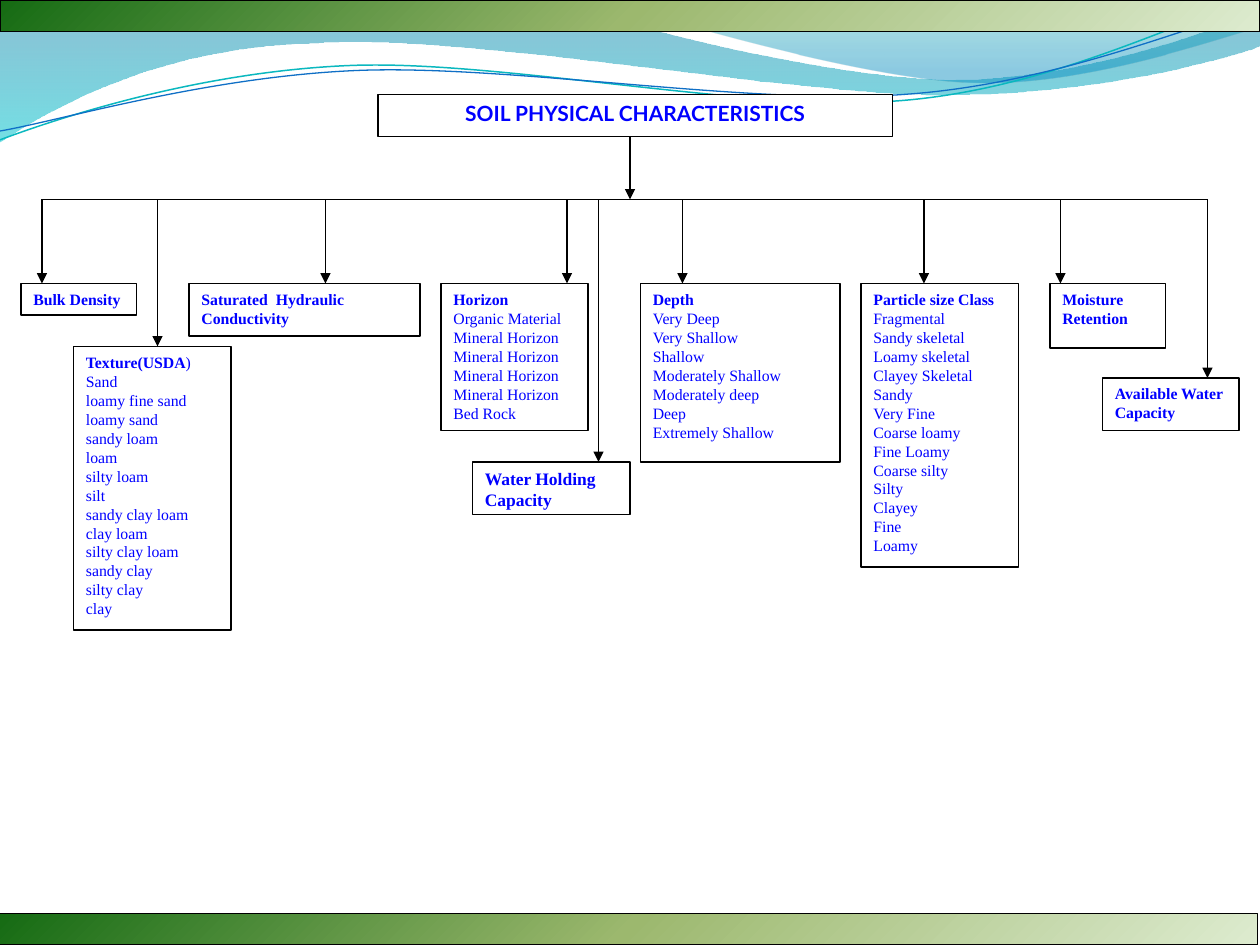
import math

import pptx
import pptx.util
import pptx.dml.color
import pptx.enum.shapes
import pptx.enum.text
import pptx.oxml
import pptx.oxml.ns
from lxml import etree

Inches = pptx.util.Inches
Pt = pptx.util.Pt
RGBColor = pptx.dml.color.RGBColor
qn = pptx.oxml.ns.qn
RECT = pptx.enum.shapes.MSO_SHAPE.RECTANGLE

BLACK = RGBColor(0x00, 0x00, 0x00)
WHITE = RGBColor(0xFF, 0xFF, 0xFF)
BLUE = RGBColor(0x00, 0x00, 0xFF)
TEAL = RGBColor(0x0A, 0xB8, 0xBF)
NAVY = RGBColor(0x0F, 0x6F, 0xC6)
DEEP = RGBColor(0x00, 0x74, 0xA1)
AQUA = RGBColor(0x00, 0xC6, 0xCF)
SEA = RGBColor(0x00, 0xA1, 0xA9)
SKY = RGBColor(0x00, 0x8B, 0xBF)
PALE = RGBColor(0xDD, 0xEB, 0xCF)
OLIVE = RGBColor(0x9C, 0xB8, 0x6E)
GREEN = RGBColor(0x15, 0x6B, 0x13)

DOWN = '<a:lin ang="5400000" scaled="0"/>'
CORNER = '<a:path path="circle"><a:fillToRect l="100000" t="100000"/></a:path>'
GRID = Inches(1) / 12  # the chart sits on twelfths of an inch
BUS = 19
TILT = -2.7


def shade(shape, stops, kind):
    """Give a gradient fill; a stop is percent, colour and opacity percent."""
    marks = "".join(
        f'<a:gs pos="{pos * 1000}"><a:srgbClr val="{color}">'
        f'<a:alpha val="{alpha * 1000}"/></a:srgbClr></a:gs>'
        for pos, color, alpha in stops)
    grad = pptx.oxml.parse_xml(
        f'<a:gradFill {pptx.oxml.ns.nsdecls("a")} rotWithShape="1">'
        f'<a:gsLst>{marks}</a:gsLst>{kind}</a:gradFill>')
    shape.fill.background()
    props = shape.element.spPr
    props.replace(props.find(qn("a:noFill")), grad)


def write(para, text, size, bold, font="Times New Roman"):
    run = para.add_run()
    run.text = text
    run.font.size = Pt(size)
    run.font.bold = bold
    run.font.name = font
    run.font.color.rgb = BLUE


deck = pptx.Presentation()
deck.slide_width, deck.slide_height = Inches(10), Inches(7.5)
slide = deck.slides.add_slide(deck.slide_layouts[5])
shapes = slide.shapes

# Waves: a start point, then steps of 2 numbers (line) or 6 (cubic curve);
# a stroked wave has the centre it is tilted about
waves = [
    ((0, 0), [(4.4, -0.01), (4.76, 0.17, 6.64, 0.63, 7.58, 0.63),
              (8.53, 0.63, 9.58, 0.26, 10, 0.09), (10.01, 0.36),
              (9.83, 0.44, 8.7, 0.76, 7.46, 0.75),
              (6.22, 0.75, 3.82, 0.28, 2.57, 0.34),
              (1.29, 0.36, 0.46, 0.83, -0.01, 1.13), (0, 0)],
     [(0, DEEP, 45), (100, AQUA, 55)], None, 0, None),
    ((4.79, -0.01), [(5.09, 0.11, 6.82, 0.62, 7.69, 0.65),
                     (8.56, 0.69, 9.61, 0.32, 10, 0.21), (10, 0),
                     (4.79, -0.01)],
     [(0, SEA, 30), (80, SKY, 45)], None, 0, None),
    ((0, 1.11), [(0.48, 0.93, 1.58, 0.57, 2.77, 0.52),
                 (3.95, 0.47, 5.93, 0.89, 7.13, 0.8),
                 (8.33, 0.71, 9.38, 0.15, 9.98, -0.02)],
     None, TEAL, 0.85, (4.99, 0.58)),
    ((0, 1.04), [(0.47, 0.96, 1.64, 0.61, 2.83, 0.56),
                 (4.03, 0.51, 5.97, 0.84, 7.17, 0.75),
                 (8.36, 0.67, 9.41, 0.21, 10, 0.06)],
     None, NAVY, 0.75, (5, 0.59)),
]
for start, steps, stops, color, width, mid in waves:
    points = [start]
    for step in steps:
        points += zip(step[::2], step[1::2])
    if mid:
        cos, sin = math.cos(math.radians(-TILT)), math.sin(math.radians(-TILT))
        points = [(mid[0] + (x - mid[0]) * cos - (y - mid[1]) * sin,
                   mid[1] + (x - mid[0]) * sin + (y - mid[1]) * cos)
                  for x, y in points]
    spots = [(Inches(x), Inches(y)) for x, y in points]
    pen = shapes.build_freeform(*spots[0])
    pen.add_line_segments(spots[1:], close=bool(stops))
    wave = pen.convert_to_shape()
    wave.shadow.inherit = False

    # Join each group of three points into one curve
    legs = iter(list(wave.element.iter(qn("a:lnTo"))))
    for step in steps:
        leg = next(legs)
        if len(step) == 6:
            leg.tag = qn("a:cubicBezTo")
            for extra in (next(legs), next(legs)):
                leg.append(extra[0])
                extra.getparent().remove(extra)

    if stops:
        shade(wave, stops, DOWN)
        wave.line.fill.background()
    else:
        wave.rotation = TILT
        wave.fill.background()
        wave.line.color.rgb = color
        wave.line.width = Pt(width)

# Boxes in grid units: left, top, width, height, arrow x; size, heading, items
boxes = [
    (82, 27, 15, 27, 88, 9, "Particle size Class",
     ["Fragmental", "Sandy skeletal", "Loamy skeletal", "Clayey Skeletal",
      "Sandy", "Very Fine", "Coarse loamy", "Fine Loamy", "Coarse silty",
      "Silty", "Clayey", "Fine", "Loamy"]),
    (18, 27, 22, 5, 31, 9, "Saturated  Hydraulic Conductivity", []),
    (2, 27, 11, 3, 4, 9, "Bulk Density", []),
    (42, 27, 14, 14, 54, 9, "Horizon",
     ["Organic Material"] + ["Mineral Horizon"] * 4 + ["Bed Rock"]),
    (7, 33, 15, 27, 15, 9, "Texture(USDA)",
     ["Sand", "loamy fine sand", "loamy sand", "sandy loam", "loam",
      "silty loam", "silt", "sandy clay loam", "clay loam",
      "silty clay loam", "sandy clay", "silty clay", "clay"]),
    (61, 27, 19, 17, 65, 9, "Depth",
     ["Very Deep", "Very Shallow", "Shallow", "Moderately Shallow",
      "Moderately deep", "Deep", "Extremely Shallow"]),
    (100, 27, 11, 6.15, 101, 9, "Moisture Retention", []),
    (105, 36, 13, 5, 115, 9, "Available Water Capacity", []),
    (45, 44, 15, 5, 57, 10, "Water Holding Capacity", []),
]
framed = []
for *place, drop, size, head, items in boxes:
    box = shapes.add_shape(RECT, *[round(n * GRID) for n in place])
    box.fill.solid()
    box.fill.fore_color.rgb = WHITE
    frame = box.text_frame
    frame.word_wrap = True
    frame.vertical_anchor = pptx.enum.text.MSO_ANCHOR.TOP
    para = frame.paragraphs[0]
    name, mark, rest = head.partition(")")
    write(para, name, size, True)
    if mark:
        write(para, mark, size, False)
    for item in items:
        write(frame.add_paragraph(), item, size, False)
    for para in frame.paragraphs:
        para.alignment = pptx.enum.text.PP_ALIGN.LEFT
    framed.append(box)

# Bus, stem and one arrow down to each box
links = [(4, BUS, 115, BUS, False), (60, 13, 60, BUS, True)]
links += [(box[4], BUS, box[4], box[1], True) for box in boxes]
for *ends, arrow in links:
    link = shapes.add_connector(pptx.enum.shapes.MSO_CONNECTOR.STRAIGHT,
                                *[round(n * GRID) for n in ends])
    link.line.color.rgb = BLACK
    link.line.width = Pt(0.75)
    props = link.element.spPr
    if arrow:
        etree.SubElement(props.find(qn("a:ln")), qn("a:tailEnd"), type="triangle")
    etree.SubElement(props, qn("a:effectLst"))

title = shapes.title
title.left, title.top, title.width, title.height = [
    round(n * GRID) for n in (36, 9, 49, 4)]
title.fill.solid()
title.fill.fore_color.rgb = WHITE
frame = title.text_frame
frame.word_wrap = True
frame.auto_size = pptx.enum.text.MSO_AUTO_SIZE.NONE
frame.vertical_anchor = pptx.enum.text.MSO_ANCHOR.TOP
frame.paragraphs[0].alignment = pptx.enum.text.PP_ALIGN.CENTER
write(frame.paragraphs[0], "SOIL PHYSICAL CHARACTERISTICS", 12, True, "Lato")
title.element.getparent().append(title.element)  # in front of the waves
framed.append(title)

for left, top in [(0, 0), (-0.02, 7.25)]:
    bar = shapes.add_shape(RECT, Inches(left), Inches(top),
                           Inches(10), Inches(0.25))
    shade(bar, [(0, PALE, 100), (50, OLIVE, 100), (100, GREEN, 100)], CORNER)
    framed.append(bar)

for shape in framed:
    shape.line.color.rgb = BLACK
    shape.line.width = Pt(0.75)
    shape.shadow.inherit = False

deck.save("out.pptx")
